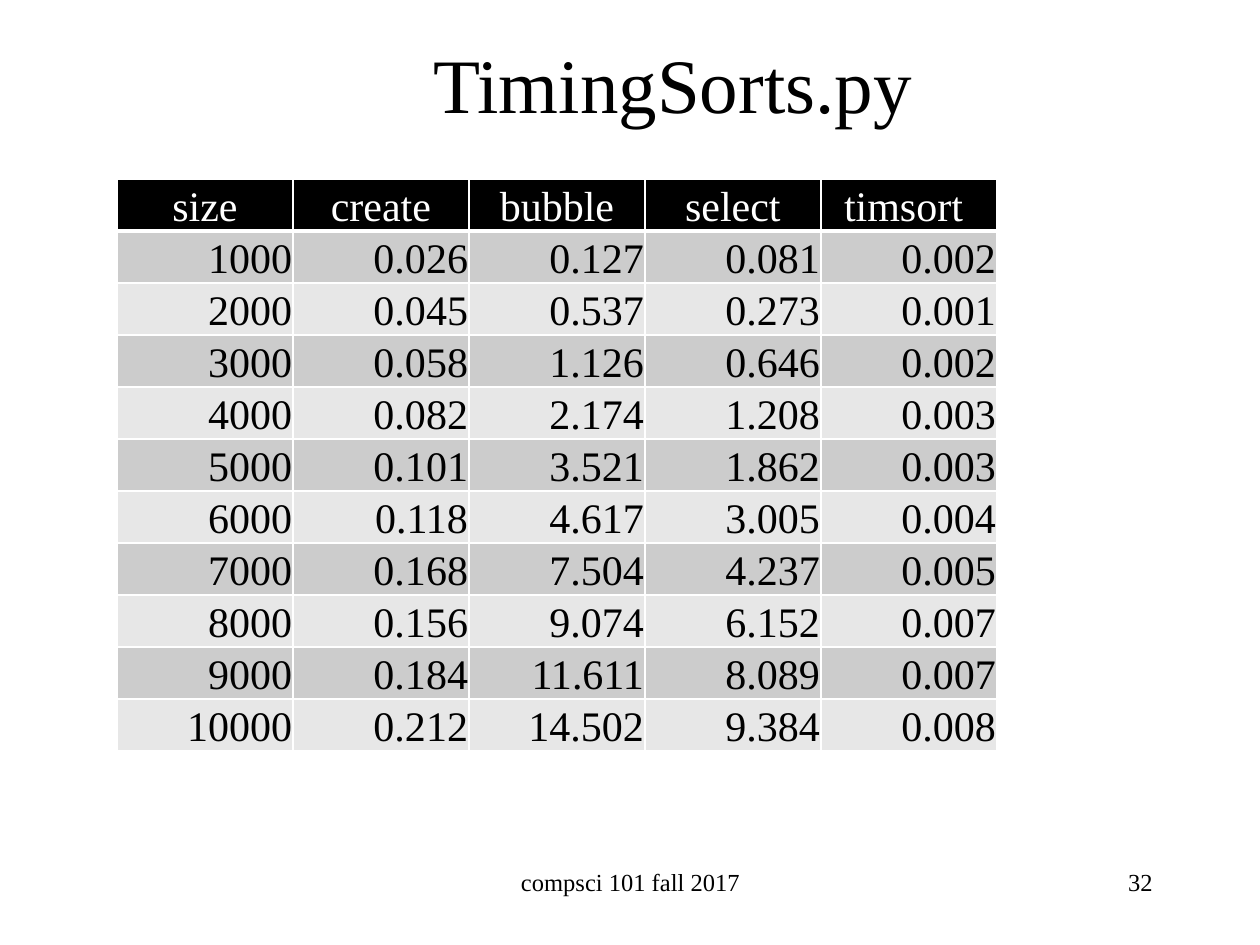
from lxml.etree import SubElement
from pptx import Presentation
from pptx.dml.color import RGBColor
from pptx.enum.text import MSO_ANCHOR as Anchor, MSO_AUTO_SIZE as AutoSize, PP_ALIGN as Align
from pptx.oxml.ns import qn
from pptx.util import Emu, Pt

# Content
TITLE = "TimingSorts.py "
HEADINGS = ["size", "create", "bubble", "select", "timsort "]
TIMINGS = [
    ("1000", "0.026", "0.127", "0.081", "0.002"),
    ("2000", "0.045", "0.537", "0.273", "0.001"),
    ("3000", "0.058", "1.126", "0.646", "0.002"),
    ("4000", "0.082", "2.174", "1.208", "0.003"),
    ("5000", "0.101", "3.521", "1.862", "0.003"),
    ("6000", "0.118", "4.617", "3.005", "0.004"),
    ("7000", "0.168", "7.504", "4.237", "0.005"),
    ("8000", "0.156", "9.074", "6.152", "0.007"),
    ("9000", "0.184", "11.611", "8.089", "0.007"),
    ("10000", "0.212", "14.502", "9.384", "0.008"),
]
FOOTERS = [
    ("compsci 101 fall 2017", (431, 861, 399, 63), Align.CENTER),
    ("32", (903, 861, 262, 63), Align.RIGHT),
]

THEME = {
    "font": "Times New Roman",
    "ink": "000000", "paper": "FFFFFF", "bands": ("CCCCCC", "E7E7E7"),
    "title": 44, "table": 24, "footer": 14,
}

# Geometry in px
PX_PER_INCH = 126
PAGE = (1260, 945)
TITLE_BOX = (147, 4, 1071, 158)
TABLE_LEFT, TABLE_TOP = 117, 179
COLUMN_WIDTH, ROW_HEIGHT = 176, 52


def px(length):
    return Emu(round(length * 914400 / PX_PER_INCH))


def set_attributes(target, values):
    for name, value in values.items():
        setattr(target, name, value)


def write(frame, text, size, color, align):
    para = frame.paragraphs[0]
    para.alignment = align
    span = para.add_run()
    span.text = text
    set_attributes(span.font, {"name": THEME["font"], "size": Pt(size)})
    span.font.color.rgb = RGBColor.from_string(color)


def add_borders(cell, bottom):
    properties = cell._tc.get_or_add_tcPr()
    for side, width in {"lnL": 1, "lnR": 1, "lnT": 1, "lnB": bottom}.items():
        line = SubElement(properties, qn(f"a:{side}"), w=str(Pt(width)))
        fill = SubElement(line, qn("a:solidFill"))
        SubElement(fill, qn("a:srgbClr"), val=THEME["paper"])


def add_title(page):
    title = page.shapes.title
    set_attributes(title, dict(zip(("left", "top", "width", "height"), map(px, TITLE_BOX))))
    set_attributes(title.text_frame, {
        "word_wrap": True, "auto_size": AutoSize.NONE, "vertical_anchor": Anchor.MIDDLE,
    })
    write(title.text_frame, TITLE, THEME["title"], THEME["ink"], Align.CENTER)


def add_timings(page):
    rows = [HEADINGS, *TIMINGS]
    count = len(HEADINGS)
    table = page.shapes.add_table(
        len(rows), count, px(TABLE_LEFT), px(TABLE_TOP),
        px(COLUMN_WIDTH * count), px(ROW_HEIGHT * len(rows)),
    ).table
    for column in table.columns:
        column.width = px(COLUMN_WIDTH)
    for r, values in enumerate(rows):
        table.rows[r].height = px(ROW_HEIGHT)
        if r == 0:
            fill, color, align, bottom = THEME["ink"], THEME["paper"], Align.CENTER, 3
        else:
            fill, color, align, bottom = THEME["bands"][(r - 1) % 2], THEME["ink"], Align.RIGHT, 1
        for c, value in enumerate(values):
            cell = table.cell(r, c)
            set_attributes(cell, {
                "margin_left": px(1), "margin_right": px(1),
                "margin_top": px(1), "margin_bottom": 0,
                "vertical_anchor": Anchor.BOTTOM,
            })
            # Borders must come before the fill in the cell properties
            add_borders(cell, bottom)
            cell.fill.solid()
            cell.fill.fore_color.rgb = RGBColor.from_string(fill)
            write(cell.text_frame, value, THEME["table"], color, align)


def add_footers(page):
    for text, place, align in FOOTERS:
        box = page.shapes.add_textbox(*map(px, place))
        box.text_frame.word_wrap = True
        write(box.text_frame, text, THEME["footer"], THEME["ink"], align)


def main():
    deck = Presentation()
    deck.slide_width, deck.slide_height = map(px, PAGE)
    page = deck.slides.add_slide(deck.slide_layouts[5])
    add_title(page)
    add_timings(page)
    add_footers(page)
    deck.save("out.pptx")


if __name__ == "__main__":
    main()
